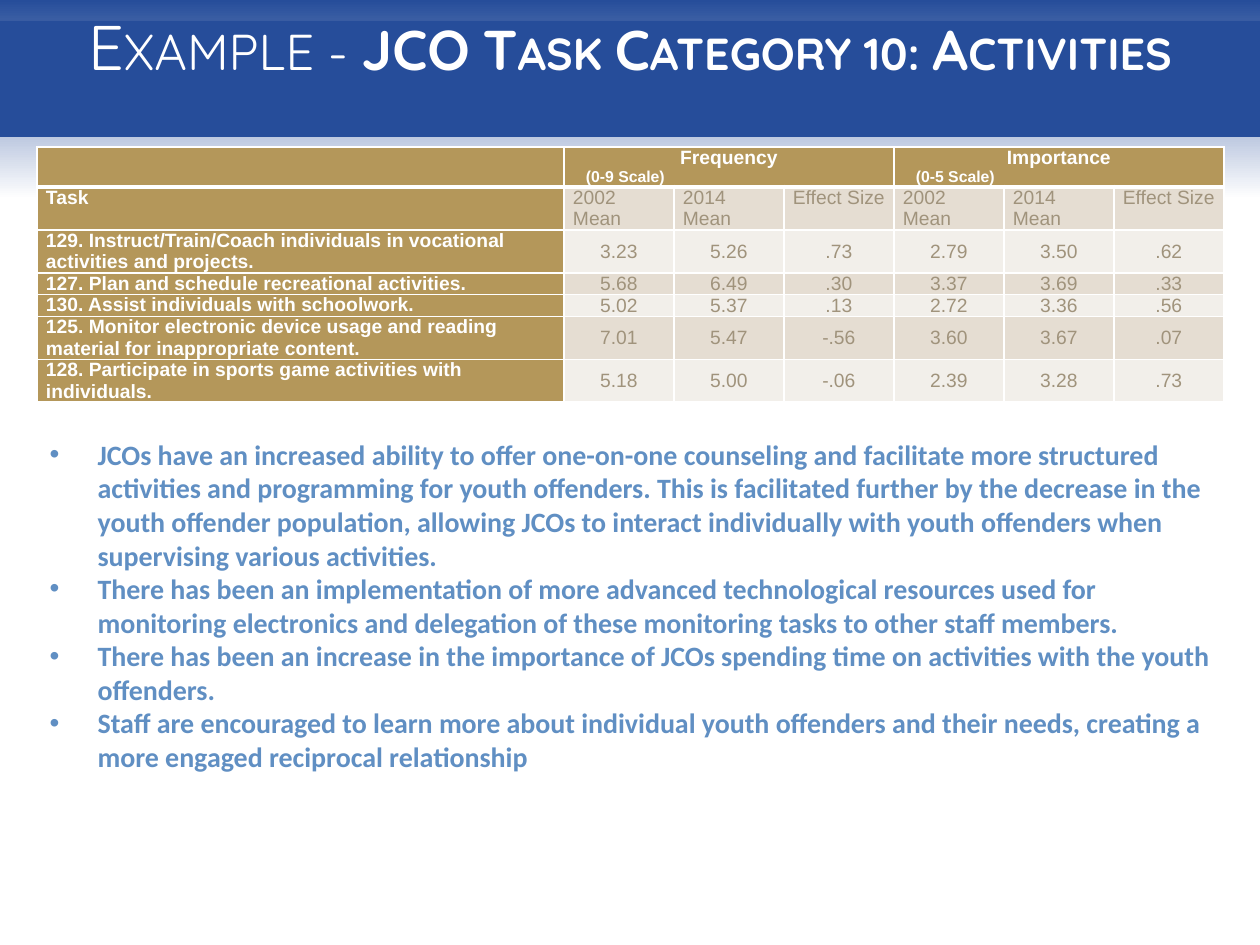
"""Build the slide comparing JCO activity task ratings from 2002 and 2014."""
import copy
from dataclasses import dataclass
from typing import Optional

import pptx
import pptx.dml.color
import pptx.enum.text
import pptx.oxml
import pptx.oxml.ns
import pptx.util
from lxml import etree

EMU_PER_PX = 914400 / 126
COLORS = {
    "blue": "264D9A",
    "white": "FFFFFF",
    "gold": "B4975A",
    "dark_band": "E5DDD2",
    "light_band": "F2EFEA",
    "figure": "A0937C",
    "finding": "608FC3",
}
ALIGN = pptx.enum.text.PP_ALIGN
ANCHOR = pptx.enum.text.MSO_ANCHOR
CELL_INSET = 9
SCALE_INDENT = 13
BULLET_INDENT = 48
COLUMN_WIDTHS = [527] + [110] * 6
ROW_HEIGHTS = [40, 42, 43, 21, 22, 43, 43]


@dataclass
class Task:
    name: str
    ratings: list[str]


@dataclass
class CellStyle:
    fill: str
    color: str = "white"
    bold: bool = True
    align: Optional[ALIGN] = ALIGN.LEFT
    anchor: ANCHOR = ANCHOR.TOP
    bottom: int = 1


SCALES = {1: ("Frequency", "(0-9 Scale)"), 4: ("Importance", "(0-5 Scale)")}
MEASURES = ["2002 Mean", "2014 Mean", "Effect Size"] * 2
TASKS = [
    Task("129. Instruct/Train/Coach individuals in vocational activities and projects.",
         ["3.23", "5.26", ".73", "2.79", "3.50", ".62"]),
    Task("127. Plan and schedule recreational activities.",
         ["5.68", "6.49", ".30", "3.37", "3.69", ".33"]),
    Task("130. Assist individuals with schoolwork.",
         ["5.02", "5.37", ".13", "2.72", "3.36", ".56"]),
    Task("125. Monitor electronic device usage and reading material for inappropriate content.",
         ["7.01", "5.47", "-.56", "3.60", "3.67", ".07"]),
    Task("128. Participate in sports game activities with individuals.",
         ["5.18", "5.00", "-.06", "2.39", "3.28", ".73"]),
]
FINDINGS = [
    "JCOs have an increased ability to offer one-on-one counseling and facilitate more "
    "structured activities and programming for youth offenders. This is facilitated further "
    "by the decrease in the youth offender population, allowing JCOs to interact individually "
    "with youth offenders when supervising various activities.",
    "There has been an implementation of more advanced technological resources used for "
    "monitoring electronics and delegation of these monitoring tasks to other staff members.",
    "There has been an increase in the importance of JCOs spending time on activities with "
    "the youth offenders.",
    "Staff are encouraged to learn more about individual youth offenders and their needs, "
    "creating a more engaged reciprocal relationship",
]


def px(length: int) -> pptx.util.Emu:
    return pptx.util.Emu(round(length * EMU_PER_PX))


def rgb(name: str) -> pptx.dml.color.RGBColor:
    return pptx.dml.color.RGBColor.from_string(COLORS[name])


def place(part, left: int, top: int, width: int, height: int) -> None:
    part.left, part.top, part.width, part.height = map(px, (left, top, width, height))


def format_font(font, family: str, size: float, color: str, bold: bool) -> None:
    font.name, font.size, font.bold = family, pptx.util.Pt(size), bold
    font.color.rgb = rgb(color)


def set_background(slide) -> None:
    stops = "".join(
        f'<a:gs pos="{position}"><a:srgbClr val="{COLORS[color]}"/></a:gs>'
        for position, color in ((0, "blue"), (21000, "white"), (100000, "white")))
    slide.background.fill.solid()
    solid = slide.background._cSld.find(".//" + pptx.oxml.ns.qn("a:solidFill"))
    gradient = pptx.oxml.parse_xml(
        f'<a:gradFill {pptx.oxml.ns.nsdecls("a")} rotWithShape="1"><a:gsLst>{stops}</a:gsLst>'
        '<a:lin ang="5400000" scaled="0"/></a:gradFill>')
    solid.getparent().replace(solid, gradient)


def fill_title(title) -> None:
    place(title, 0, 21, 1260, 116)
    title.fill.solid()
    title.fill.fore_color.rgb = rgb("blue")
    frame = title.text_frame
    frame.word_wrap = True
    frame.auto_size = pptx.enum.text.MSO_AUTO_SIZE.NONE
    frame.vertical_anchor = ANCHOR.MIDDLE
    frame.margin_top = frame.margin_bottom = 0
    heading = frame.paragraphs[0]
    heading.alignment = ALIGN.CENTER
    for words, size, bold in (("Example - ", 36, False),
                              ("JCO Task Category 10: Activities", 32, True)):
        run = heading.add_run()
        run.text = words
        format_font(run.font, "Quicksand", size, "white", bold)
        run.font._rPr.set("cap", "small")
    heading.add_line_break()
    heading._p[-1].append(copy.deepcopy(run.font._rPr))
    closing = etree.SubElement(heading._p, pptx.oxml.ns.qn("a:endParaRPr"))
    closing.set("sz", "3200")
    etree.SubElement(closing, pptx.oxml.ns.qn("a:latin")).set("typeface", "Quicksand")


def style_cell(cell, style: CellStyle) -> None:
    cell.margin_left = cell.margin_right = px(CELL_INSET)
    cell.margin_top = cell.margin_bottom = 0
    cell.vertical_anchor = style.anchor
    properties = cell._tc.get_or_add_tcPr()
    for side, points in (("L", 1), ("R", 1), ("T", 1), ("B", style.bottom)):
        properties.append(pptx.oxml.parse_xml(
            f'<a:ln{side} {pptx.oxml.ns.nsdecls("a")} w="{points * 12700}"><a:solidFill>'
            f'<a:srgbClr val="{COLORS["white"]}"/></a:solidFill></a:ln{side}>'))
    cell.fill.solid()
    cell.fill.fore_color.rgb = rgb(style.fill)


def write_cell(cell, words: str, style: CellStyle) -> None:
    style_cell(cell, style)
    cell.text_frame.text = words
    for paragraph in cell.text_frame.paragraphs:
        paragraph.alignment = style.align
        for run in paragraph.runs:
            format_font(run.font, "Arial", 11, style.color, style.bold)


def draw_ratings(slide) -> None:
    table = slide.shapes.add_table(
        len(ROW_HEIGHTS), len(COLUMN_WIDTHS), px(37), px(147),
        px(sum(COLUMN_WIDTHS)), px(sum(ROW_HEIGHTS))).table
    for column, width in zip(table.columns, COLUMN_WIDTHS):
        column.width = px(width)
    for row, height in zip(table.rows, ROW_HEIGHTS):
        row.height = px(height)

    header = CellStyle("gold", align=ALIGN.CENTER, bottom=3)
    for column in range(len(COLUMN_WIDTHS)):
        write_cell(table.cell(0, column), "\n".join(SCALES.get(column, ())), header)
    for column in SCALES:
        table.cell(0, column).merge(table.cell(0, column + 2))
        scale = table.cell(0, column).text_frame.paragraphs[1]
        scale.alignment = ALIGN.LEFT
        scale._p.get_or_add_pPr().set("marL", str(px(SCALE_INDENT)))
        scale.runs[0].font.size = pptx.util.Pt(9)

    for row, task in enumerate([Task("Task", MEASURES)] + TASKS, start=1):
        write_cell(table.cell(row, 0), task.name, CellStyle("gold"))
        figure = CellStyle("dark_band" if row % 2 else "light_band", "figure", False)
        if row > 1:
            figure.align, figure.anchor = ALIGN.CENTER, ANCHOR.MIDDLE
        for column, rating in enumerate(task.ratings, start=1):
            write_cell(table.cell(row, column), rating, figure)


def fill_findings(body) -> None:
    place(body, 37, 431, 1187, 352)
    frame = body.text_frame
    frame.text = "\n".join(FINDINGS)
    frame.word_wrap = True
    frame.auto_size = pptx.enum.text.MSO_AUTO_SIZE.NONE
    for finding in frame.paragraphs:
        properties = finding._p.get_or_add_pPr()
        properties.set("marL", str(px(BULLET_INDENT)))
        properties.set("indent", str(-px(BULLET_INDENT)))
        for tag, name, value in (("a:buFont", "typeface", "Arial"), ("a:buChar", "char", "•")):
            etree.SubElement(properties, pptx.oxml.ns.qn(tag)).set(name, value)
        finding.space_before = pptx.util.Pt(0)
        format_font(finding.runs[0].font, "Calibri", 16, "finding", True)


def main() -> None:
    deck = pptx.Presentation()
    deck.slide_width, deck.slide_height = px(1260), px(945)
    slide = deck.slides.add_slide(deck.slide_layouts[1])
    set_background(slide)
    fill_title(slide.shapes.title)
    draw_ratings(slide)
    fill_findings(slide.placeholders[1])
    deck.save("out.pptx")


if __name__ == "__main__":
    main()
